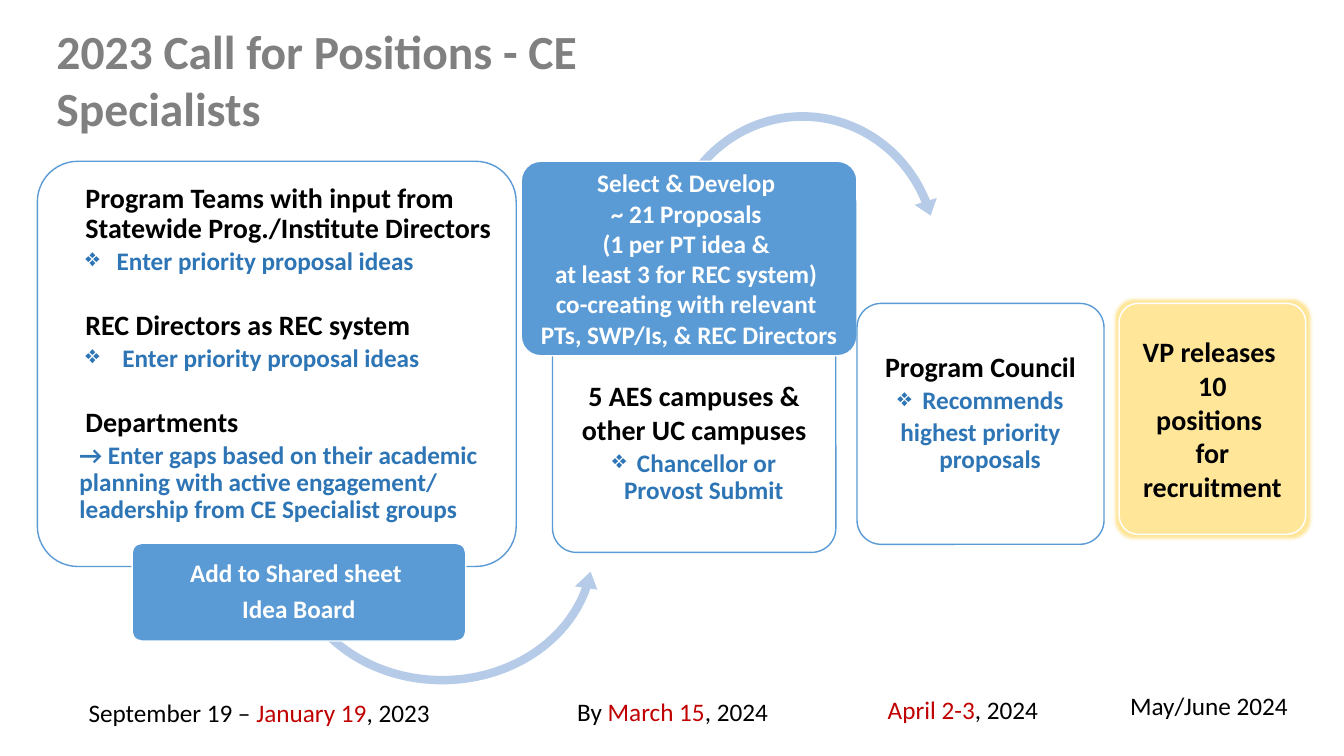
from lxml import etree
from pptx import Presentation
from pptx.dml.color import RGBColor
from pptx.enum.shapes import MSO_SHAPE
from pptx.enum.text import MSO_ANCHOR, MSO_AUTO_SIZE, PP_ALIGN
from pptx.oxml.ns import qn
from pptx.util import Pt

PX = 9144
COLORS = {
    "white": "FFFFFF", "black": "000000", "gray": "808080", "red": "C00000",
    "blue": "5B9BD5", "accent": "2E75B6", "arrow": "B5CBE7", "gold": "FFE699",
}


def add_line(frame, first, spans, size, bold=True, align=PP_ALIGN.CENTER,
             margin=0, indent=0, bullet=False, spacing=1.0, after=0):
    para = frame.paragraphs[0] if first else frame.add_paragraph()
    para.alignment = align
    para.line_spacing = spacing
    para.space_before = Pt(0)
    para.space_after = Pt(after)
    properties = para._p.get_or_add_pPr()
    properties.set("marL", str(margin * PX))
    properties.set("indent", str(indent * PX))
    if bullet:
        etree.SubElement(properties, qn("a:buChar")).set("char", "❖")
    for text, color in spans:
        span = para.add_run()
        span.text = text
        span.font.name = "Calibri"
        span.font.size = Pt(size)
        span.font.bold = bold
        span.font.color.rgb = RGBColor.from_string(COLORS[color])


def add_panel(kind, place, fill, line=None):
    shape = page.shapes.add_shape(kind, *[length * PX for length in place])
    shape.shadow.inherit = False
    shape.fill.solid()
    shape.fill.fore_color.rgb = RGBColor.from_string(COLORS[fill])
    if line:
        shape.line.color.rgb = RGBColor.from_string(COLORS[line])
        shape.line.width = Pt(1)
    else:
        shape.line.fill.background()
    return shape


deck = Presentation()
deck.slide_width = 1333 * PX
deck.slide_height = 750 * PX
page = deck.slides.add_slide(deck.slide_layouts[5])

title = page.shapes.title
title.left, title.top, title.width, title.height = [n * PX for n in (46, 17, 722, 67)]
title.text_frame.word_wrap = True
title.text_frame.auto_size = MSO_AUTO_SIZE.NONE
title.text_frame.vertical_anchor = MSO_ANCHOR.TOP
add_line(title.text_frame, True, [("2023 Call for Positions - CE Specialists", "gray")],
         34, align=PP_ALIGN.LEFT)

left_heading = dict(size=20, align=PP_ALIGN.LEFT, margin=25, spacing=0.9, after=3)
left_bullet = dict(size=18, align=PP_ALIGN.LEFT, margin=56, indent=-31,
                   bullet=True, spacing=0.9, after=25)
left_note = dict(size=18, align=PP_ALIGN.LEFT, margin=19, spacing=0.9, after=3)
heading = dict(size=20, margin=25, indent=-25, spacing=0.9, after=3)
detail = dict(size=18, margin=19, indent=-19, spacing=0.9, after=3)
point = dict(detail, bullet=True)
board = dict(size=18, spacing=0.9, after=6)
plain = dict(size=18)
release = dict(size=20)

steps = [
    ((37, 160, 475, 402), "white", "blue", (23, 23, 21, 23), MSO_ANCHOR.TOP, [
        ("Program Teams with input from Statewide Prog./Institute Directors", "black", left_heading),
        ("Enter priority proposal ideas", "accent", left_bullet),
        ("REC Directors as REC system", "black", left_heading),
        (" Enter priority proposal ideas", "accent", left_bullet),
        ("Departments", "black", left_heading),
        ("→ Enter gaps based on their academic planning with active engagement/ "
         "leadership from CE Specialist groups", "accent", left_note),
    ]),
    (MSO_SHAPE.LEFT_CIRCULAR_ARROW, (278, 406, 321, 280), (0.03, 3.89, 8.8, 92.11, 0.04)),
    ((131, 539, 331, 97), "blue", "white", (7, 6, 7, 6), MSO_ANCHOR.MIDDLE, [
        ("Add to Shared sheet ", "white", board),
        ("Idea Board", "white", board),
    ]),
    ((548, 309, 281, 239), "white", "blue", (19, 70, 19, 19), MSO_ANCHOR.TOP, [
        ("5 AES campuses &", "black", heading),
        ("other UC campuses", "black", heading),
        (" Chancellor or Provost Submit", "accent", point),
    ]),
    (MSO_SHAPE.CIRCULAR_ARROW, (652, 104, 288, 298), (0.03, 3.84, 201.88, 133.23, 0.04)),
    ((517, 160, 333, 193), "blue", "white", (9, 8, 9, 8), MSO_ANCHOR.MIDDLE, [
        ("Select & Develop ", "white", plain),
        ("~ 21 Proposals ", "white", plain),
        ("(1 per PT idea & ", "white", plain),
        ("at least 3 for REC system) ", "white", plain),
        ("co-creating with relevant ", "white", plain),
        ("PTs, SWP/Is, & REC Directors", "white", plain),
    ]),
    ((850, 301, 245, 239), "white", "blue", (19, 50, 19, 19), MSO_ANCHOR.TOP, [
        ("Program Council", "black", heading),
        (" Recommends", "accent", point),
        ("highest priority proposals", "accent", detail),
    ]),
    ((1110, 301, 185, 229), "gold", "white", (10, 8, 10, 8), MSO_ANCHOR.MIDDLE, [
        ("VP releases ", "black", release),
        ("10", "black", release),
        ("positions ", "black", release),
        ("for recruitment", "black", release),
    ]),
]

for step in steps:
    if len(step) == 3:
        kind, place, bends = step
        arrow = add_panel(kind, place, "arrow")
        for index, bend in enumerate(bends):
            arrow.adjustments[index] = bend
        continue
    place, fill, line, insets, anchor, rows = step
    box = add_panel(MSO_SHAPE.ROUNDED_RECTANGLE, place, fill, line)
    box.adjustments[0] = 0.1
    corner = round(0.03 * min(place[2:]))
    frame = box.text_frame
    frame.word_wrap = True
    frame.vertical_anchor = anchor
    frame.margin_left, frame.margin_top, frame.margin_right, frame.margin_bottom = [
        (inset - corner) * PX for inset in insets]
    for index, (text, color, style) in enumerate(rows):
        add_line(frame, index == 0, [(text, color)], **style)
    if fill == "gold":
        effects = box._element.spPr.find(qn("a:effectLst"))
        glow = etree.SubElement(effects, qn("a:glow"), rad=str(7 * PX))
        etree.SubElement(glow, qn("a:srgbClr"), val=COLORS["gold"])

dates = [
    ((78, 687, 417, 40), PP_ALIGN.LEFT,
     [("September 19 – ", "black"), ("January 19", "red"), (", 2023", "black")]),
    ((1087, 680, 224, 40), PP_ALIGN.CENTER, [("May/June 2024", "black")]),
    ((471, 686, 392, 40), PP_ALIGN.CENTER,
     [("By ", "black"), ("March 15", "red"), (", 2024", "black")]),
    ((851, 684, 208, 40), PP_ALIGN.CENTER, [("April 2-3", "red"), (", 2024", "black")]),
]
for place, align, spans in dates:
    label = page.shapes.add_textbox(*[length * PX for length in place])
    label.text_frame.word_wrap = True
    add_line(label.text_frame, True, spans, 18, bold=False, align=align)

deck.save("out.pptx")
